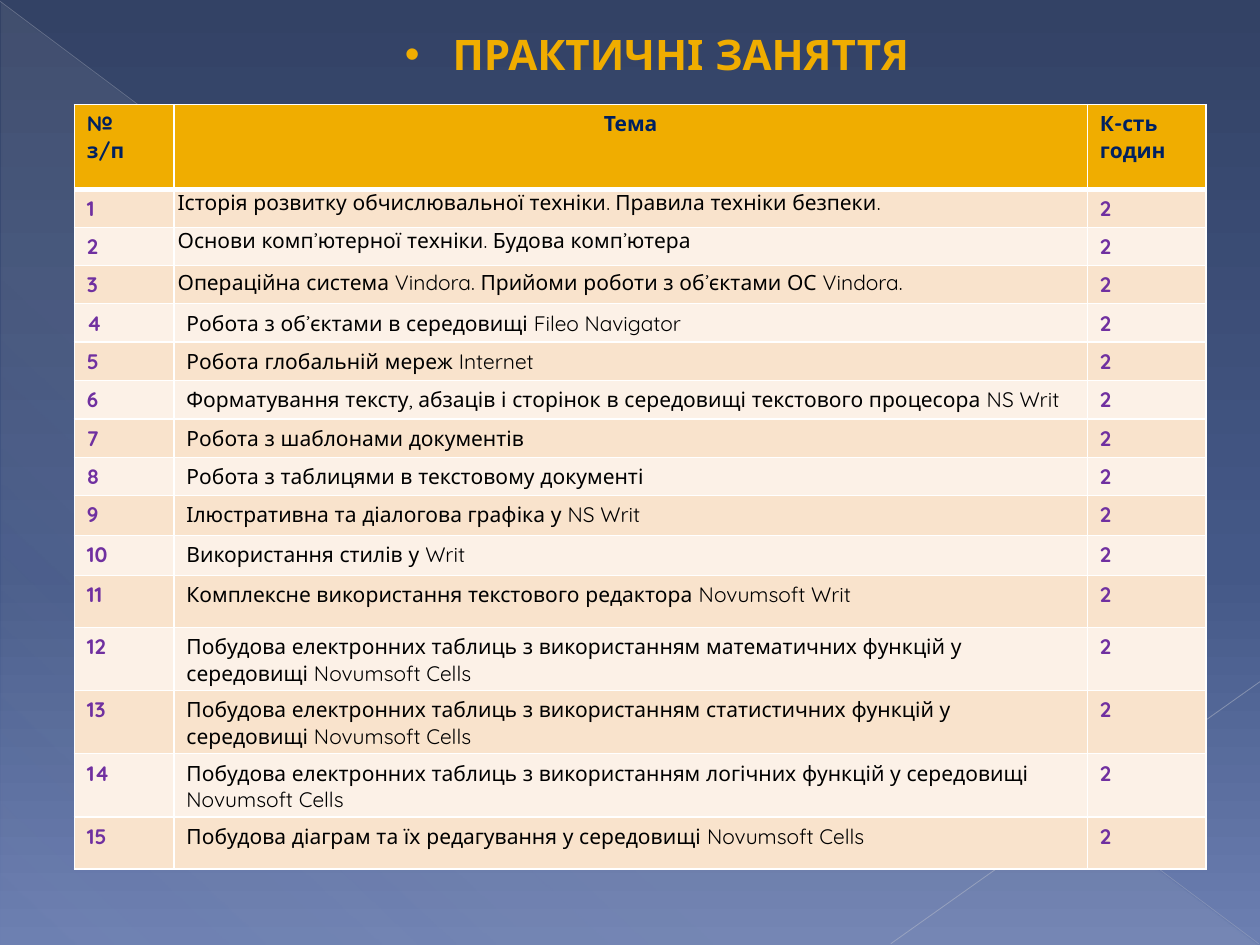
import pptx
import pptx.util
import pptx.dml.color
import pptx.enum.shapes
import pptx.enum.text
import pptx.oxml
import pptx.oxml.ns
import pptx.oxml.xmlchemy

Emu, Pt = pptx.util.Emu, pptx.util.Pt
RGB = pptx.dml.color.RGBColor.from_string
qn = pptx.oxml.ns.qn
Sub = pptx.oxml.xmlchemy.OxmlElement
ALIGN = pptx.enum.text.PP_ALIGN
SHAPE = pptx.enum.shapes.MSO_SHAPE
STRAIGHT = pptx.enum.shapes.MSO_CONNECTOR.STRAIGHT

THEME = {
    "font": "Quicksand", "title": 24, "body": 12,
    "gold": "F0AD00", "navy": "002060", "purple": "7030A0", "black": "000000",
    "bands": ["FCF1E7", "F9E3CC"], "border": "FFFFFF", "thin": 1, "thick": 3,
    "sky": [(0, "334265", 100), (60, "445887", 100), (100, "6C7FB1", 100)],
    "haze": [(0, "D4D4D6", 10), (70, "D4D4D6", 8), (100, "D4D4D6", 1)],
}
TOPICS = [
    "Історія розвитку обчислювальної техніки. Правила техніки безпеки.",
    "Основи комп’ютерної техніки. Будова комп’ютера",
    "Операційна система Vindora. Прийоми роботи з об’єктами ОС Vindora.",
    "Робота з об’єктами в середовищі Fileo Navigator",
    "Робота глобальній мереж Internet",
    "Форматування тексту, абзаців і сторінок в середовищі текстового процесора NS Writ",
    "Робота з шаблонами документів",
    "Робота з таблицями в текстовому документі",
    "Ілюстративна та діалогова графіка у NS Writ",
    "Використання стилів у Writ",
    "Комплексне використання текстового редактора Novumsoft Writ",
    "Побудова електронних таблиць з використанням математичних функцій у середовищі Novumsoft Cells",
    "Побудова електронних таблиць з використанням статистичних функцій у середовищі Novumsoft Cells",
    "Побудова електронних таблиць з використанням логічних функцій у середовищі Novumsoft Cells",
    "Побудова діаграм та їх редагування у середовищі Novumsoft Cells",
]
COLS = [7.9, 72.5, 9.4]
ROWS = [6.75] + [3.02] * 3 + [3.05] * 5 + [3.17] * 2 + [4.13] + [5] * 3 + [4.13]


def write(tf, text, size=THEME["body"], color=THEME["black"], bold=False,
          align=ALIGN.LEFT, spacing=None):
    for i, line in enumerate(text.split("\n")):
        p = tf.add_paragraph() if i else tf.paragraphs[0]
        p.alignment = align
        if spacing:
            p.line_spacing = spacing
        r = p.add_run()
        r.text = line
        r.font.name = THEME["font"]
        r.font.size = Pt(size)
        r.font.bold = bold
        r.font.color.rgb = RGB(color)


def blend(fill, element, stops, angle):
    fill.gradient()
    fill.gradient_angle = 360 - angle
    gs_list = next(element.iter(qn("a:gsLst")))
    for gs in list(gs_list):
        gs_list.remove(gs)
    for place, color, opacity in stops:
        gs = Sub("a:gs")
        gs.set("pos", str(place * 1000))
        clr = Sub("a:srgbClr")
        clr.set("val", color)
        alpha = Sub("a:alpha")
        alpha.set("val", str(opacity * 1000))
        clr.append(alpha)
        gs.append(clr)
        gs_list.append(gs)


prs = pptx.Presentation()
prs.slide_width, prs.slide_height = pptx.util.Inches(10), pptx.util.Inches(7.5)
col, row = prs.slide_width // 100, prs.slide_height // 75
s = prs.slides.add_slide(prs.slide_layouts[6])
blend(s.background.fill, s.element, THEME["sky"], 90)

sp = s.shapes.add_shape(SHAPE.RIGHT_TRIANGLE, Emu(0.1 * col), Emu(0.2 * row),
                        Emu(99.8 * col), Emu(74.8 * row))
sp.shadow.inherit = False
sp.line.fill.background()
blend(sp.fill, sp.element, THEME["haze"], 133)

for x1, y1, x2, y2, color, width, opacity in [
    (0, 0.1, 99.9, 74.9, "B9BDC8", 0.39, 35),
    (100, 54.1, 70.7, 74.9, "C1C4CE", 0.47, 45),
]:
    line = s.shapes.add_connector(STRAIGHT, Emu(x1 * col), Emu(y1 * row),
                                  Emu(x2 * col), Emu(y2 * row))
    line.line.width = Pt(width)
    line.line.color.rgb = RGB(color)
    alpha = Sub("a:alpha")
    alpha.set("val", str(opacity * 1000))
    next(line.element.iter(qn("a:srgbClr"))).append(alpha)
    line.element.spPr.append(Sub("a:effectLst"))

tf = s.shapes.add_textbox(Emu(13.8 * col), Emu(1.8 * row),
                          Emu(76.7 * col), Emu(5 * row)).text_frame
tf.word_wrap = True
write(tf, "ПРАКТИЧНІ ЗАНЯТТЯ", size=THEME["title"], color=THEME["gold"],
      bold=True, align=ALIGN.CENTER)
pPr = tf.paragraphs[0]._p.get_or_add_pPr()
pPr.set("marL", str(int(3.8 * col)))
pPr.set("indent", str(int(-3.8 * col)))
for tag, key, value in [("a:buFont", "typeface", "Arial"), ("a:buChar", "char", "•")]:
    bullet = Sub(tag)
    bullet.set(key, value)
    pPr.append(bullet)

table = s.shapes.add_table(len(ROWS), len(COLS), Emu(5.9 * col), Emu(8.3 * row),
                           Emu(sum(COLS) * col), Emu(sum(ROWS) * row)).table
for column, width in zip(table.columns, COLS):
    column.width = Emu(width * col)
for table_row, height in zip(table.rows, ROWS):
    table_row.height = Emu(height * row)

lessons = [(str(n), topic, "2") for n, topic in enumerate(TOPICS, 1)]
for i, texts in enumerate([("№\nз/п", "Тема", "К-сть\nгодин")] + lessons):
    for j, text in enumerate(texts):
        cell = table.cell(i, j)
        tcPr = cell._tc.get_or_add_tcPr()
        for side in "LRTB":
            heavy = (i, side) in [(0, "B"), (1, "T")]
            ln = Sub("a:ln" + side)
            ln.set("w", str(Pt(THEME["thick" if heavy else "thin"])))
            solid, clr = Sub("a:solidFill"), Sub("a:srgbClr")
            clr.set("val", THEME["border"])
            solid.append(clr)
            ln.append(solid)
            tcPr.append(ln)
        cell.fill.solid()
        cell.fill.fore_color.rgb = RGB(THEME["bands"][i % 2] if i else THEME["gold"])
        if j == 1 and 1 <= i <= 3:
            cell.margin_left = cell.margin_right = Emu(0.3 * col)
            cell.margin_top = cell.margin_bottom = 0
        if i == 0:
            write(cell.text_frame, text, color=THEME["navy"], bold=True,
                  align=ALIGN.CENTER if j == 1 else ALIGN.LEFT)
        elif j == 1:
            write(cell.text_frame, text, spacing=1.15 if i == 3 else None)
        else:
            write(cell.text_frame, text, color=THEME["purple"], bold=True)

prs.save("out.pptx")
